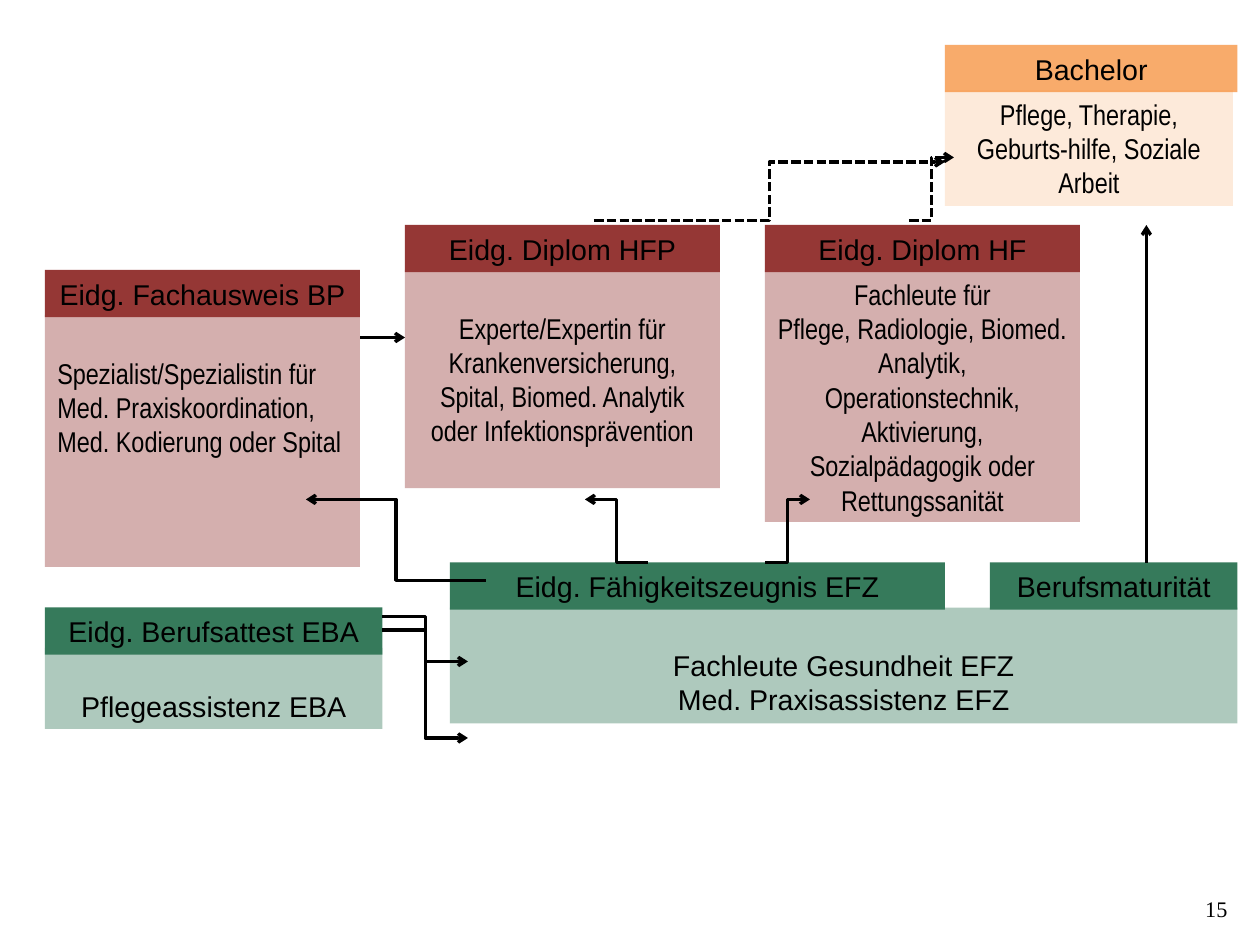
from dataclasses import dataclass

from lxml import etree
from pptx import Presentation
from pptx.dml.color import RGBColor
from pptx.enum.dml import MSO_LINE
from pptx.enum.shapes import MSO_CONNECTOR, MSO_SHAPE
from pptx.enum.text import MSO_ANCHOR, PP_ALIGN
from pptx.oxml.ns import qn
from pptx.util import Emu, Pt

RECTANGLE = MSO_SHAPE.RECTANGLE
STRAIGHT, ELBOW = MSO_CONNECTOR.STRAIGHT, MSO_CONNECTOR.ELBOW
LEFT, CENTER, RIGHT = PP_ALIGN.LEFT, PP_ALIGN.CENTER, PP_ALIGN.RIGHT
TOP = MSO_ANCHOR.TOP
DASHED = MSO_LINE.SQUARE_DOT

EMU_PER_PX = 9000
PAGE_SIZE = (1120, 840)
HEADER_HEIGHT = 42
BODY_OFFSET = 40
INSET_X, INSET_Y = 11, 6
TEXT_LINE = 30


@dataclass(frozen=True)
class Theme:
    ink: str = "000000"
    green: str = "367A5B"
    red: str = "953735"
    orange: str = "F79646"
    heading_font: str = "Arial"
    narrow_font: str = "Arial Narrow"
    number_font: str = "Times New Roman"
    text_size: int = 18
    number_size: int = 14
    arrow_width: int = 2


THEME = Theme()


def px(length):
    return Emu(length * EMU_PER_PX)


def apply_format(target, values):
    for name, value in values.items():
        setattr(target, name, value)


def set_opacity(shape, percent):
    color = shape._element.spPr.find(qn("a:solidFill"))[0]
    etree.SubElement(color, qn("a:alpha"), val=str(percent * 1000))


def write_text(box, lines, font, size, align=CENTER, skipped_lines=0):
    frame = box.text_frame
    apply_format(frame, {
        "word_wrap": True,
        "vertical_anchor": TOP,
        "margin_left": px(INSET_X),
        "margin_right": px(INSET_X),
        "margin_top": px(INSET_Y + skipped_lines * TEXT_LINE),
        "margin_bottom": px(INSET_Y),
    })
    for index, line in enumerate(lines):
        para = frame.paragraphs[0] if index == 0 else frame.add_paragraph()
        apply_format(para, {"text": line, "alignment": align})
        for span in para.runs:
            apply_format(span.font, {"name": font, "size": Pt(size)})
            span.font.color.rgb = RGBColor.from_string(THEME.ink)


def add_panel(page, place, color, opacity, lines, font, **layout):
    box = page.shapes.add_shape(RECTANGLE, *map(px, place))
    box.shadow.inherit = False
    box.fill.solid()
    box.fill.fore_color.rgb = RGBColor.from_string(color)
    if opacity < 100:
        set_opacity(box, opacity)
    box.line.fill.background()
    write_text(box, lines, font, THEME.text_size, **layout)


def add_header(page, left, top, width, color, title, opacity=100):
    place = (left, top, width, HEADER_HEIGHT)
    add_panel(page, place, color, opacity, [title], THEME.heading_font)


def add_body(page, place, color, lines,
             font=THEME.narrow_font, opacity=40, **layout):
    add_panel(page, place, color, opacity, lines, font, **layout)


def add_arrow(page, start, end, dashed=False):
    aligned = start[0] == end[0] or start[1] == end[1]
    kind = STRAIGHT if aligned else ELBOW
    arrow = page.shapes.add_connector(kind, *map(px, start + end))
    arrow.line.width = Pt(THEME.arrow_width)
    arrow.line.color.rgb = RGBColor.from_string(THEME.ink)
    if dashed:
        arrow.line.dash_style = DASHED
    outline = arrow._element.spPr.find(qn("a:ln"))
    etree.SubElement(outline, qn("a:tailEnd"), type="arrow")
    etree.SubElement(arrow._element.spPr, qn("a:effectLst"))


def add_page_number(page, number):
    box = page.shapes.add_textbox(*map(px, (1019, 790, 83, 39)))
    write_text(box, [number], THEME.number_font, THEME.number_size, align=RIGHT)


def add_basic_training(page):
    green, font = THEME.green, THEME.heading_font
    add_header(page, 40, 540, 300, green, "Eidg. Berufsattest EBA")
    add_header(page, 400, 500, 440, green, "Eidg. Fähigkeitszeugnis EFZ")
    add_body(page, (40, 576, 300, 72), green, ["Pflegeassistenz EBA"],
             font=font, skipped_lines=1)
    add_body(page, (400, 540, 700, 103), green,
             ["Fachleute Gesundheit EFZ", "Med. Praxisassistenz EFZ"],
             font=font, skipped_lines=1)
    add_header(page, 880, 500, 220, green, "Berufsmaturität")


def add_higher_training(page):
    stages = [
        (40, 240, 224, "Eidg. Fachausweis BP", LEFT, 1,
         ["Spezialist/Spezialistin für", "Med. Praxiskoordination,",
          "Med. Kodierung oder Spital"]),
        (360, 200, 194, "Eidg. Diplom HFP", CENTER, 1,
         ["Experte/Expertin für",
          "Krankenversicherung, Spital, Biomed. Analytik "
          "oder Infektionsprävention"]),
        (680, 200, 224, "Eidg. Diplom HF", CENTER, 0,
         ["Fachleute für\nPflege, Radiologie, Biomed. Analytik, "
          "Operationstechnik, Aktivierung, Sozialpädagogik "
          "oder Rettungssanität"]),
    ]
    for left, top, height, title, align, skipped, lines in stages:
        add_header(page, left, top, 280, THEME.red, title)
        add_body(page, (left, top + BODY_OFFSET, 280, height), THEME.red, lines,
                 align=align, skipped_lines=skipped)


def add_bachelor(page):
    add_body(page, (840, 80, 256, 103), THEME.orange,
             ["Pflege, Therapie, Geburts-hilfe, Soziale Arbeit"], opacity=20)
    add_header(page, 840, 40, 260, THEME.orange, "Bachelor", opacity=80)


def add_pathways(page):
    pathways = [
        ((1019, 500), (1019, 200)),
        ((340, 548), (416, 588)),
        ((340, 560), (416, 656)),
        ((680, 500), (720, 444)),
        ((576, 500), (520, 444)),
        ((432, 516), (272, 444)),
        ((320, 300), (360, 300)),
    ]
    bachelor_entries = [((808, 196), (848, 140)), ((528, 196), (840, 144))]
    for start, end in pathways:
        add_arrow(page, start, end)
    for start, end in bachelor_entries:
        add_arrow(page, start, end, dashed=True)


def main():
    deck = Presentation()
    deck.slide_width, deck.slide_height = map(px, PAGE_SIZE)
    page = deck.slides.add_slide(deck.slide_layouts[6])
    add_page_number(page, "15")
    add_basic_training(page)
    add_higher_training(page)
    add_bachelor(page)
    add_pathways(page)
    deck.save("out.pptx")


if __name__ == "__main__":
    main()
